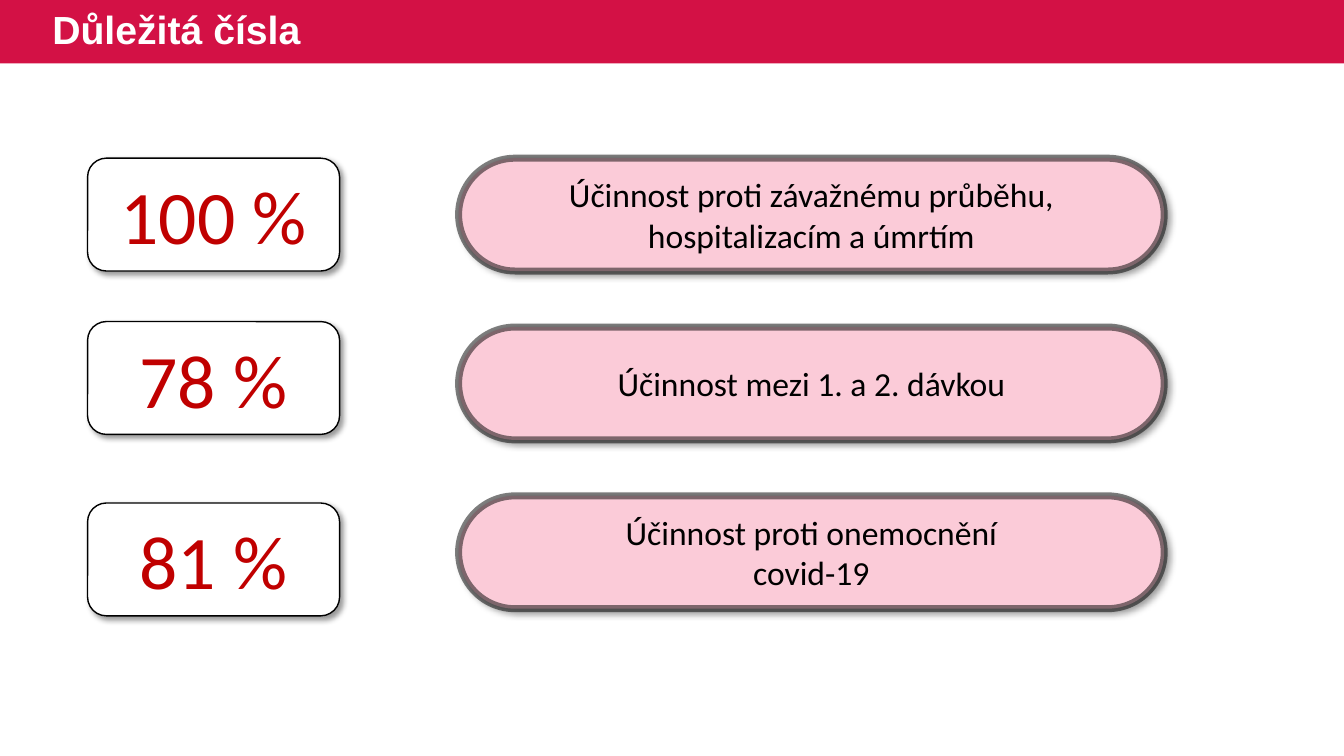
from lxml.etree import SubElement
from pptx import Presentation
from pptx.dml.color import RGBColor
from pptx.enum.shapes import MSO_SHAPE
from pptx.enum.text import MSO_ANCHOR, MSO_AUTO_SIZE, PP_ALIGN
from pptx.oxml.ns import qn
from pptx.util import Pt

COLORS = {"band": "D31145", "pill": "FBCBD8", "number": "C00000",
          "white": "FFFFFF", "black": "000000"}
WIDTH, HEIGHT = 960, 540
BAND_H = 45.4
BOX_H = 80.6
BADGE_X, BADGE_W = 62.6, 180
PILL_X, PILL_W = 327.6, 504
PILL_TOP, PILL_STEP = 113, 120.6

# Badge top, figure, lines of the statement
FIGURES = [
    (113, "100 %", ["Účinnost proti závažnému průběhu, hospitalizacím a úmrtím"]),
    (229.7, "78 %", ["Účinnost mezi 1. a 2. dávkou"]),
    (359.3, "81 %", ["Účinnost proti onemocnění", "covid-19"]),
]


def rgb(name):
    return RGBColor.from_string(COLORS[name])


def write(tf, lines, size, color, font="Calibri", bold=False,
          align=PP_ALIGN.CENTER, spacing=None):
    tf.word_wrap = True
    tf.auto_size = MSO_AUTO_SIZE.NONE
    tf.vertical_anchor = MSO_ANCHOR.MIDDLE
    for i, line in enumerate(lines):
        p = tf.paragraphs[0] if i == 0 else tf.add_paragraph()
        p.alignment = align
        p.line_spacing = spacing
        r = p.add_run()
        r.text = line
        r.font.name = font
        r.font.size = Pt(size)
        r.font.bold = bold
        r.font.color.rgb = rgb(color)


def set_alpha(color_element, percent):
    SubElement(color_element, qn("a:alpha"), val=str(percent * 1000))


class SlideBuilder:
    def __init__(self, prs):
        self.slide = prs.slides.add_slide(prs.slide_layouts[5])

    def box(self, shape, x, y, w, h, fill):
        sp = self.slide.shapes.add_shape(shape, Pt(x), Pt(y), Pt(w), Pt(h))
        sp.fill.solid()
        sp.fill.fore_color.rgb = rgb(fill)
        sp.line.fill.background()
        sp.shadow.inherit = False
        return sp

    def title(self, text):
        """Place the title over a full-width colour band."""
        band = self.box(MSO_SHAPE.RECTANGLE, 0, 0, WIDTH, BAND_H, "band")
        sp = self.slide.shapes.title
        band._element.addnext(sp._element)
        sp.left, sp.top, sp.width, sp.height = Pt(30.2), Pt(0), Pt(425), Pt(BAND_H)
        write(sp.text_frame, [text], 28, "white", font="Arial", bold=True,
              align=PP_ALIGN.LEFT, spacing=0.9)

    def card(self, x, y, w, fill, line_width):
        """Add a rounded box with a black outline and a soft shadow."""
        sp = self.box(MSO_SHAPE.ROUNDED_RECTANGLE, x, y, w, BOX_H, fill)
        sp.line.color.rgb = rgb("black")
        sp.line.width = Pt(line_width)
        effects = sp._element.spPr.find(qn("a:effectLst"))
        shadow = SubElement(effects, qn("a:outerShdw"), blurRad=str(Pt(4)),
                            dist=str(Pt(3)), dir=str(45 * 60000),
                            algn="tl", rotWithShape="0")
        set_alpha(SubElement(shadow, qn("a:srgbClr"), val=COLORS["black"]), 40)
        return sp

    def badge(self, y, text):
        sp = self.card(BADGE_X, y, BADGE_W, "white", 1)
        write(sp.text_frame, [text], 54, "number")

    def pill(self, y, lines):
        sp = self.card(PILL_X, y, PILL_W, "pill", 5)
        sp.adjustments[0] = 0.5
        set_alpha(sp.line._ln.find(".//" + qn("a:srgbClr")), 50)
        tf = sp.text_frame
        tf.margin_left = tf.margin_right = Pt(10.8)
        tf.margin_top = tf.margin_bottom = Pt(2.2)
        write(tf, lines, 24, "black")


def main():
    prs = Presentation()
    prs.slide_width, prs.slide_height = Pt(WIDTH), Pt(HEIGHT)
    builder = SlideBuilder(prs)
    builder.title("Důležitá čísla")
    for i, (badge_top, figure, statement) in enumerate(FIGURES):
        builder.badge(badge_top, figure)
        builder.pill(PILL_TOP + i * PILL_STEP, statement)
    prs.save("out.pptx")


if __name__ == "__main__":
    main()
